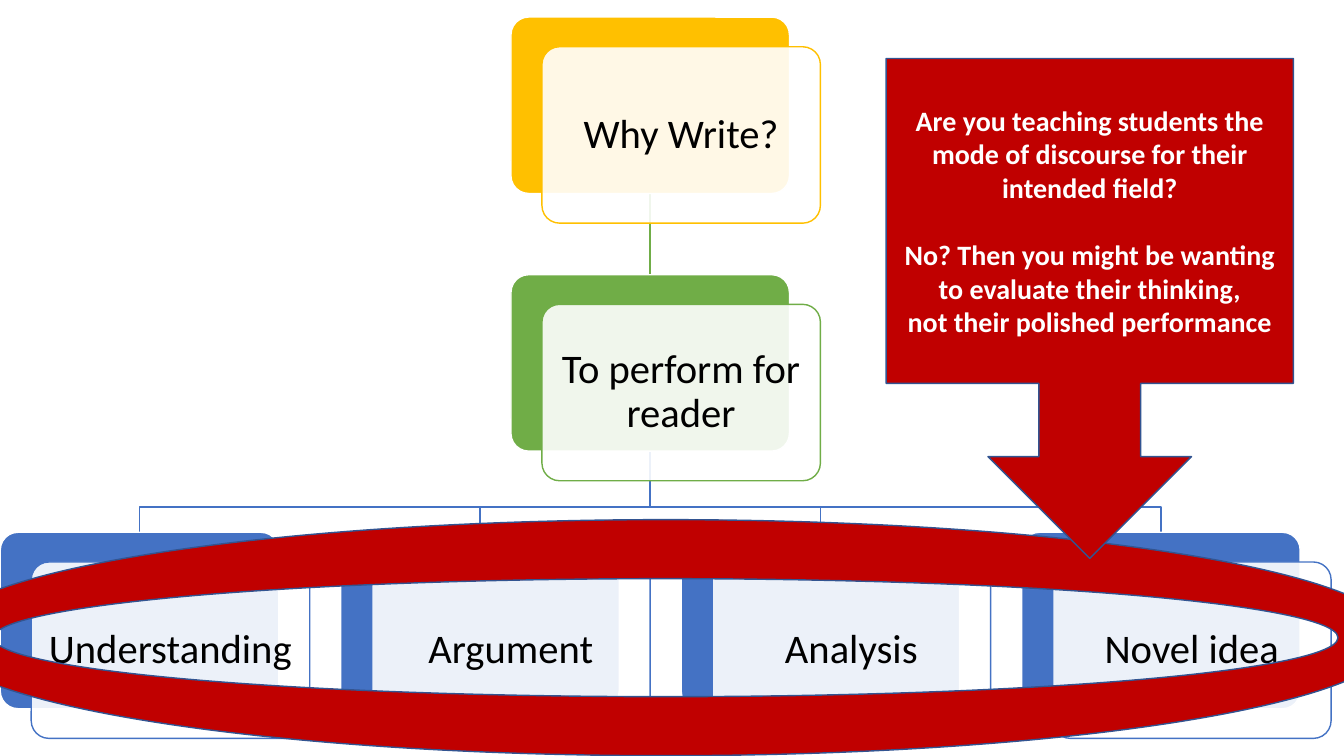
from dataclasses import dataclass

from lxml.etree import SubElement
from pptx import Presentation
from pptx.dml.color import RGBColor
from pptx.enum.shapes import MSO_CONNECTOR, MSO_SHAPE
from pptx.enum.text import MSO_ANCHOR, PP_ALIGN
from pptx.oxml.ns import qn
from pptx.util import Pt


@dataclass(frozen=True)
class Theme:
    font: str = "Calibri"
    card_size: int = 29
    callout_size: int = 20
    line_width: int = 1
    white: str = "FFFFFF"
    black: str = "000000"
    gold: str = "FFC000"
    green: str = "70AD47"
    blue: str = "4472C4"
    red: str = "C00000"
    outline: str = "325491"


THEME = Theme()

CARD_WIDTH, CARD_HEIGHT = 198.9, 126
FRONT_SHIFT_X, FRONT_SHIFT_Y = 22.1, 21.2
COLUMN_STEP, ROW_STEP = 243.2, 184
FIRST_LEFT, FIRST_TOP = 0.2, 12.2
BRANCH_GAP = 18
STEM_COLUMN = 1.5
MODES = ["Understanding", "Argument", "Analysis", "Novel idea"]
CALLOUT_LINES = [
    "Are you teaching students the mode of discourse for their intended field?",
    "No? Then you might be wanting to evaluate their thinking,",
    "not their polished performance",
]


def card_left(column):
    return FIRST_LEFT + column * COLUMN_STEP


def card_centre(column):
    return card_left(column) + CARD_WIDTH / 2


def card_top(row):
    return FIRST_TOP + row * ROW_STEP


def style_line(line, color):
    line.color.rgb = RGBColor.from_string(color)
    line.width = Pt(THEME.line_width)


def add_filled(slide, preset, left, top, width, height, fill, outline):
    shape = slide.shapes.add_shape(preset, Pt(left), Pt(top), Pt(width), Pt(height))
    shape.shadow.inherit = False
    shape.fill.solid()
    shape.fill.fore_color.rgb = RGBColor.from_string(fill)
    style_line(shape.line, outline)
    return shape


def set_opacity(shape, percent):
    color = shape.fill._xPr.find(qn("a:solidFill")).find(qn("a:srgbClr"))
    SubElement(color, qn("a:alpha")).set("val", str(percent * 1000))


def write_centred(paragraph, text, size, color, bold=False):
    paragraph.alignment = PP_ALIGN.CENTER
    run = paragraph.add_run()
    run.text = text
    run.font.name = THEME.font
    run.font.size = Pt(size)
    run.font.bold = bold
    run.font.color.rgb = RGBColor.from_string(color)


def add_card(slide, column, row, text, color):
    """Draw a coloured back panel and the translucent labelled panel over it."""
    left, top = card_left(column), card_top(row)
    back = add_filled(slide, MSO_SHAPE.ROUNDED_RECTANGLE, left, top,
                      CARD_WIDTH, CARD_HEIGHT, color, THEME.white)
    front = add_filled(slide, MSO_SHAPE.ROUNDED_RECTANGLE,
                       left + FRONT_SHIFT_X, top + FRONT_SHIFT_Y,
                       CARD_WIDTH, CARD_HEIGHT, THEME.white, color)
    back.adjustments[0] = front.adjustments[0] = 0.1
    set_opacity(front, 90)
    frame = front.text_frame
    frame.word_wrap = True
    frame.vertical_anchor = MSO_ANCHOR.MIDDLE
    frame.margin_left = frame.margin_right = Pt(8)
    label = frame.paragraphs[0]
    label.line_spacing = 0.9
    write_centred(label, text, THEME.card_size, THEME.black)


def add_stem(slide):
    x = Pt(card_centre(STEM_COLUMN))
    stem = slide.shapes.add_connector(
        MSO_CONNECTOR.STRAIGHT, x, Pt(card_top(0) + CARD_HEIGHT), x, Pt(card_top(1)))
    style_line(stem.line, THEME.green)
    SubElement(stem._element.spPr, qn("a:effectLst"))


def add_branch(slide, column):
    start_x, end_x = Pt(card_centre(STEM_COLUMN)), Pt(card_centre(column))
    start_y, end_y = Pt(card_top(1) + CARD_HEIGHT), Pt(card_top(2))
    bend_y = end_y - Pt(BRANCH_GAP)
    builder = slide.shapes.build_freeform(start_x, start_y)
    builder.add_line_segments(
        [(start_x, bend_y), (end_x, bend_y), (end_x, end_y)], close=False)
    branch = builder.convert_to_shape()
    branch.shadow.inherit = False
    branch.fill.background()
    style_line(branch.line, THEME.blue)


def add_callout(slide):
    callout = add_filled(slide, MSO_SHAPE.DOWN_ARROW_CALLOUT, 633, 41.8,
                         290.9, 357.1, THEME.red, THEME.outline)
    frame = callout.text_frame
    frame.word_wrap = True
    frame.vertical_anchor = MSO_ANCHOR.MIDDLE
    for index, text in enumerate(CALLOUT_LINES):
        paragraph = frame.add_paragraph() if index else frame.paragraphs[0]
        write_centred(paragraph, text, THEME.callout_size, THEME.white, bold=True)
    frame.paragraphs[1].space_before = Pt(24)


def main():
    deck = Presentation()
    deck.slide_width, deck.slide_height = Pt(960), Pt(540)
    slide = deck.slides.add_slide(deck.slide_layouts[6])

    for column in range(len(MODES)):
        add_branch(slide, column)
    add_stem(slide)

    add_card(slide, STEM_COLUMN, 0, "Why Write?", THEME.gold)
    add_card(slide, STEM_COLUMN, 1, "To perform for reader", THEME.green)
    for column, mode in enumerate(MODES):
        add_card(slide, column, 2, mode, THEME.blue)

    add_filled(slide, MSO_SHAPE.DONUT, -46.8, 371.2, 1044.7, 168.6,
               THEME.red, THEME.outline)
    add_callout(slide)
    deck.save("out.pptx")


if __name__ == "__main__":
    main()
